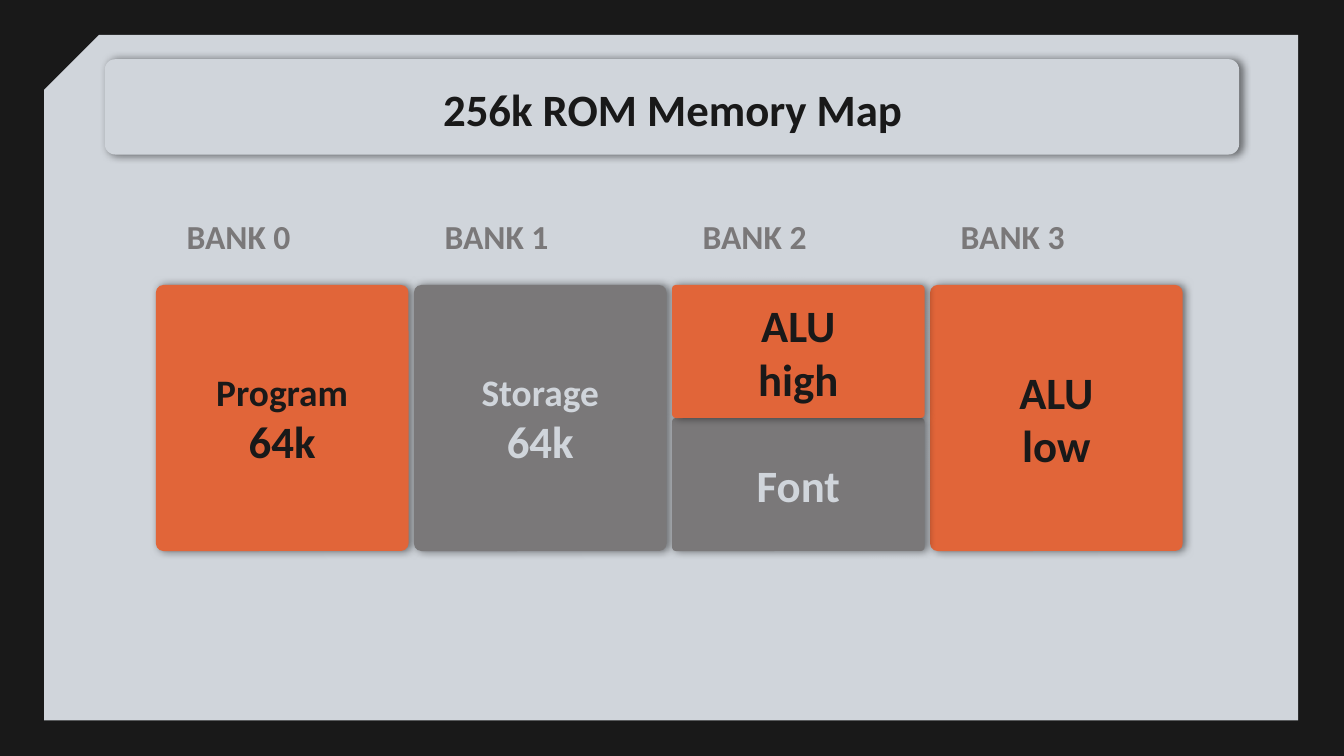
from lxml import etree
from pptx import Presentation
from pptx.dml.color import RGBColor
from pptx.enum.shapes import MSO_SHAPE
from pptx.enum.text import MSO_ANCHOR, MSO_AUTO_SIZE, PP_ALIGN
from pptx.oxml.ns import qn
from pptx.util import Inches, Pt

ROUNDED = MSO_SHAPE.ROUNDED_RECTANGLE
SNIPPED = MSO_SHAPE.SNIP_1_RECTANGLE
MIDDLE, TOP = MSO_ANCHOR.MIDDLE, MSO_ANCHOR.TOP
CENTER, LEFT = PP_ALIGN.CENTER, PP_ALIGN.LEFT
GROW = MSO_AUTO_SIZE.SHAPE_TO_FIT_TEXT

INK, PALE, ORANGE, GRAY = "191919", "D0D5DB", "E16539", "7A7879"
FONT = "Calibri"

TITLE = "256k ROM Memory Map"
BANKS = ["BANK 0", "BANK 1", "BANK 2", "BANK 3"]
# bank, first half, halves used, fill, text colour, lines with sizes
BLOCKS = [
    (0, 0, 2, ORANGE, INK, [("Program", 20), ("64k", 24)]),
    (1, 0, 2, GRAY, PALE, [("Storage", 20), ("64k", 24)]),
    (3, 0, 2, ORANGE, INK, [("ALU", 24), ("low", 24)]),
    (2, 1, 1, GRAY, PALE, [("Font", 24)]),
    (2, 0, 1, ORANGE, INK, [("ALU", 24), ("high", 24)]),
]

SLIDE_WIDTH = 10
SLIDE_HEIGHT = SLIDE_WIDTH * 9 / 16
GRID_LEFT, GRID_TOP = 1.16, 2.12
BANK_STEP, BLOCK_WIDTH, HALF_HEIGHT = 1.92, 1.88, 0.99
LABEL_INDENT, LABEL_TOP, LABEL_WIDTH, LABEL_HEIGHT = 0.13, 1.51, 1.62, 0.5


def color(value):
    return RGBColor.from_string(value)


def add_shape(page, kind, area, fill, adjustment):
    shape = page.shapes.add_shape(kind, *map(Inches, area))
    shape.adjustments[0] = adjustment
    shape.fill.solid()
    shape.fill.fore_color.rgb = color(fill)
    shape.line.fill.background()
    shape.shadow.inherit = False
    return shape


def add_shadow(shape):
    effects = shape._element.spPr.find(qn("a:effectLst"))
    shadow = etree.SubElement(effects, qn("a:outerShdw"), blurRad=str(Pt(4.5)),
                              dist=str(Pt(1.5)), dir=str(6 * 60000),
                              algn="bl", rotWithShape="0")
    tint = etree.SubElement(shadow, qn("a:srgbClr"), val="000000")
    etree.SubElement(tint, qn("a:alpha"), val="50000")


def write(shape, lines, ink, align=CENTER, anchor=MIDDLE):
    frame = shape.text_frame
    frame.word_wrap = True
    frame.vertical_anchor = anchor
    frame.margin_left = frame.margin_right = Inches(0.1)
    frame.margin_top = frame.margin_bottom = Inches(0.1)
    frame.text = "\n".join(text for text, size in lines)
    for para, (text, size) in zip(frame.paragraphs, lines):
        para.alignment = align
        for span in para.runs:
            span.font.name = FONT
            span.font.size = Pt(size)
            span.font.bold = True
            span.font.color.rgb = color(ink)


def add_text(page, area, lines, ink, align, anchor):
    box = page.shapes.add_textbox(*map(Inches, area))
    write(box, lines, ink, align, anchor)
    return box


def main():
    deck = Presentation()
    deck.slide_width, deck.slide_height = Inches(SLIDE_WIDTH), Inches(SLIDE_HEIGHT)
    page = deck.slides.add_slide(deck.slide_layouts[6])
    page.background.fill.solid()
    page.background.fill.fore_color.rgb = color(INK)

    panel = add_shape(page, SNIPPED, (0.33, 0.26, 9.33, 5.1), PALE, 0.08)
    panel._element.spPr.xfrm.set("flipH", "1")
    add_shadow(add_shape(page, ROUNDED, (0.78, 0.44, 8.44, 0.71), PALE, 0.11))
    add_text(page, (0.79, 0.49, 8.43, 0.63), [(TITLE, 24)], INK, CENTER, MIDDLE)

    for bank, half, halves, fill, ink, lines in BLOCKS:
        area = (GRID_LEFT + bank * BANK_STEP, GRID_TOP + half * HALF_HEIGHT,
                BLOCK_WIDTH, halves * HALF_HEIGHT)
        block = add_shape(page, ROUNDED, area, fill, 0.03)
        add_shadow(block)
        write(block, lines, ink)

    for bank, name in enumerate(BANKS):
        area = (GRID_LEFT + LABEL_INDENT + bank * BANK_STEP, LABEL_TOP,
                LABEL_WIDTH, LABEL_HEIGHT)
        label = add_text(page, area, [(name, 18)], GRAY, LEFT, TOP)
        label.text_frame.auto_size = GROW

    deck.save("out.pptx")


if __name__ == "__main__":
    main()
